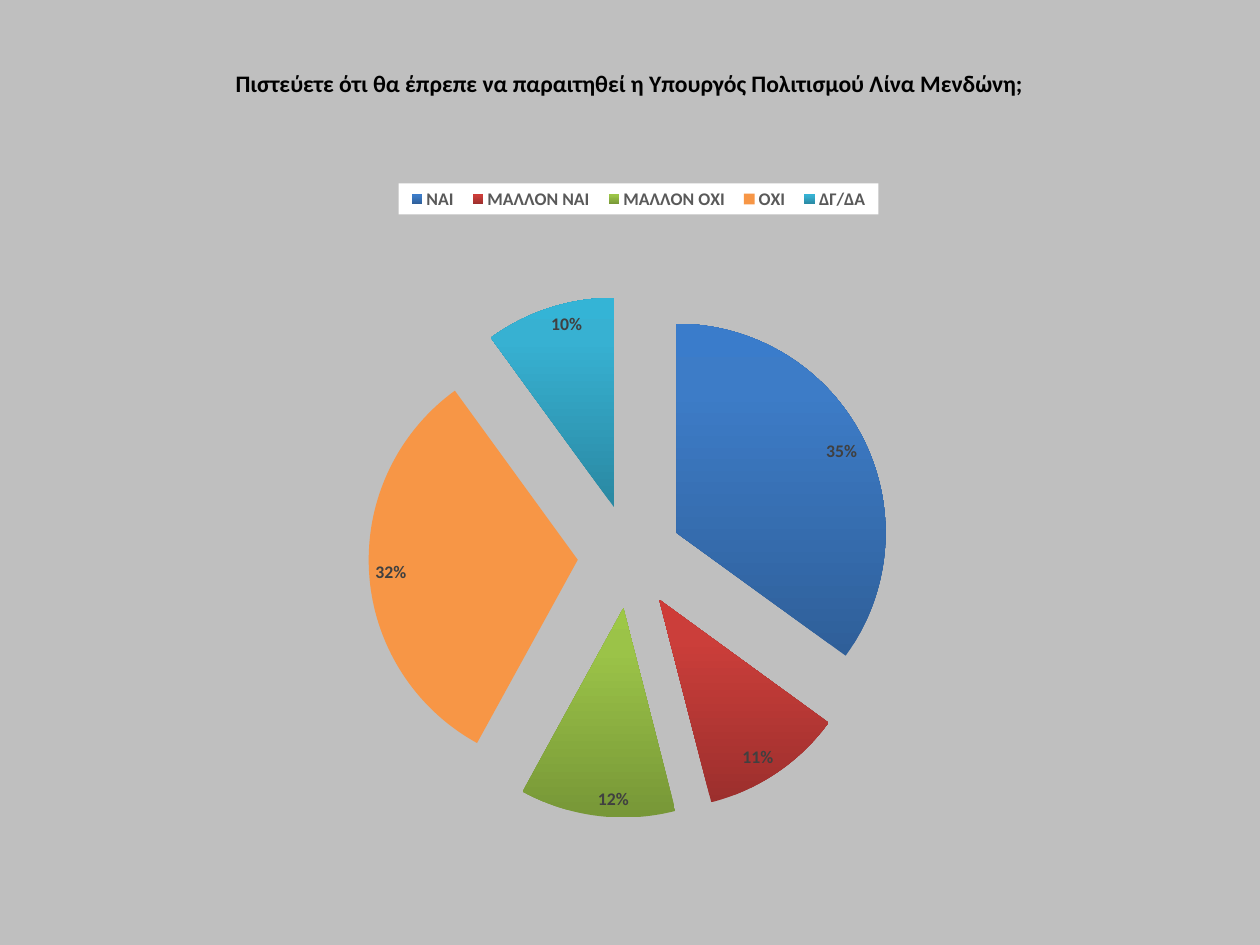
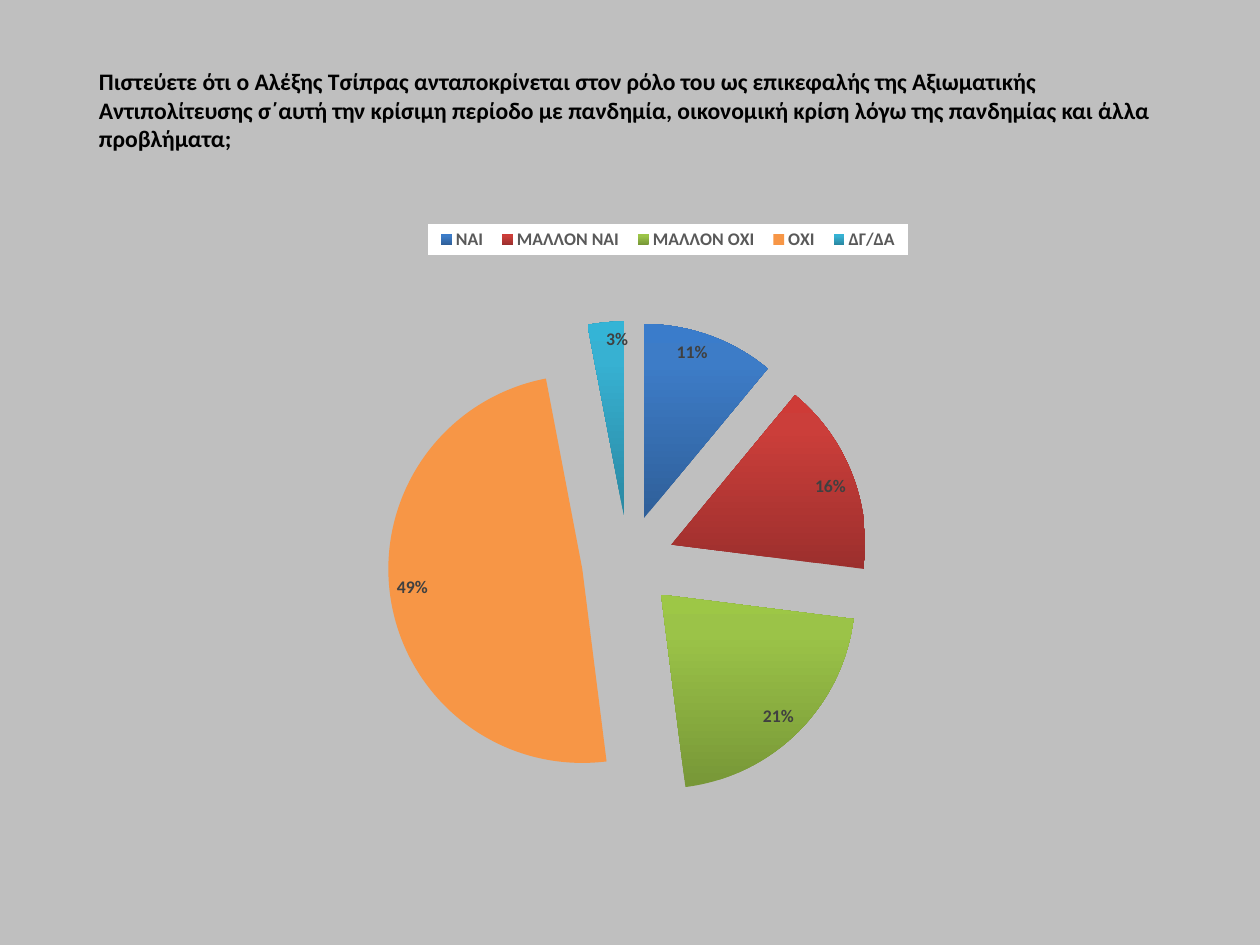
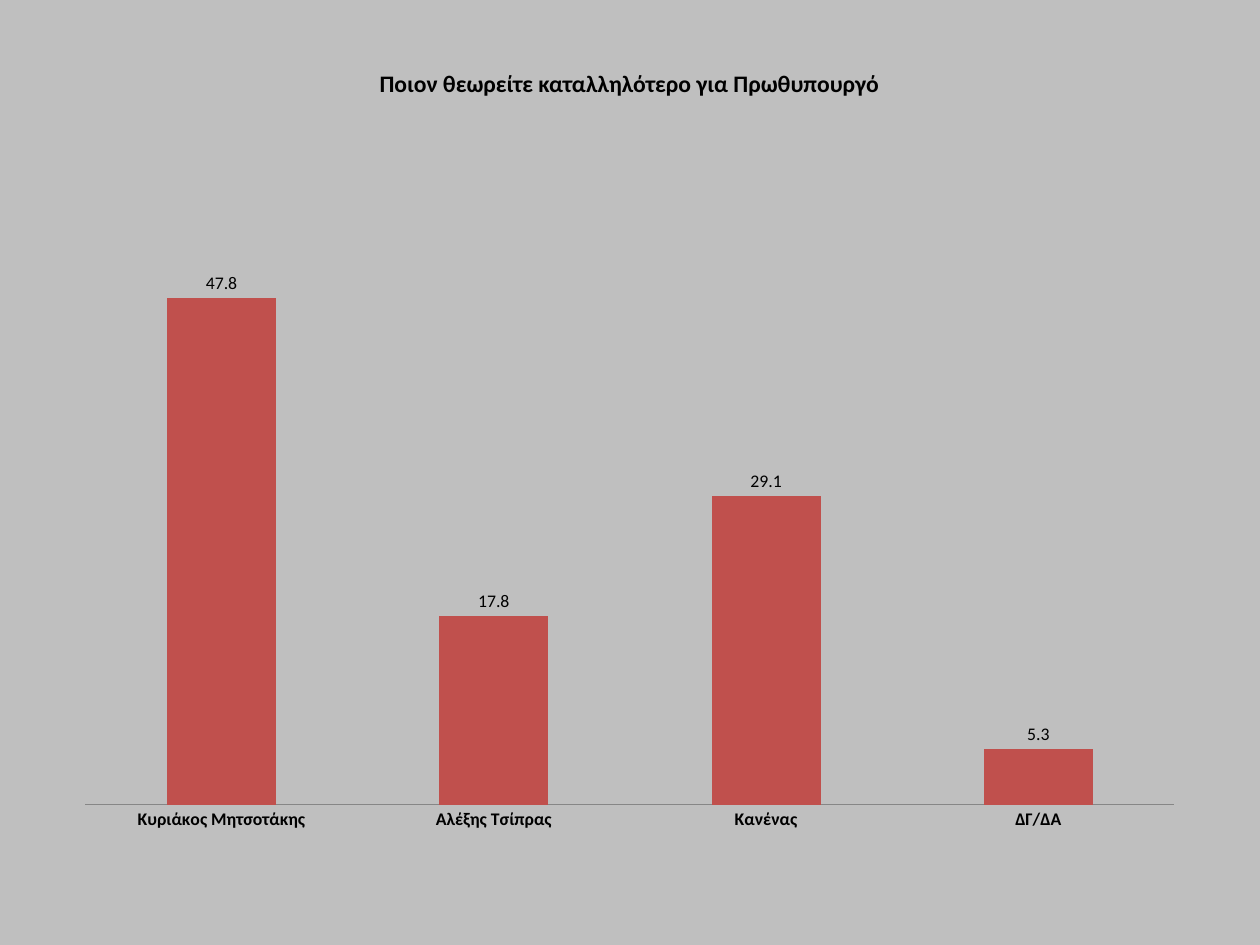
import copy
from dataclasses import dataclass
from typing import Any, Optional

import lxml.etree
import pptx
import pptx.chart.data
import pptx.dml.color
import pptx.enum.chart
import pptx.enum.text
import pptx.oxml.ns
import pptx.util

Inches = pptx.util.Inches
Pt = pptx.util.Pt
RGB = pptx.dml.color.RGBColor.from_string
qn = pptx.oxml.ns.qn
Align = pptx.enum.text.PP_ALIGN
ChartType = pptx.enum.chart.XL_CHART_TYPE
LabelPosition = pptx.enum.chart.XL_LABEL_POSITION

Box = tuple[float, float, float, float]


# Theme
@dataclass(frozen=True)
class Theme:
    font: str = "Calibri"
    background: str = "BFBFBF"
    text: str = "000000"
    legend_text: str = "595959"
    legend_fill: str = "FFFFFF"
    slice_label: str = "404040"
    bar: str = "C0504D"
    axis: str = "868686"
    title_size: int = 16
    label_size: int = 12
    base_size: int = 10
    # One tuple per answer: colours from bottom to top, or one solid colour
    answers: tuple[tuple[str, ...], ...] = (
        ("2F5F99", "3D7CC7", "3A7CCB"),
        ("9C2F2D", "CB3E3A", "CE3B37"),
        ("779737", "9BC348", "9DC746"),
        ("F79646",),
        ("2A88A2", "37B1D2", "34B4D6"),
    )
    stops: tuple[float, ...] = (0, 0.8, 1)


THEME = Theme()
CHART_LEFT, CHART_WIDTH = 0.59, 10.66
ANSWERS = ("ΝΑΙ", "ΜΑΛΛΟΝ ΝΑΙ", "ΜΑΛΛΟΝ ΟΧΙ", "ΟΧΙ", "ΔΓ/ΔΑ")
LEADERS = ("Κυριάκος Μητσοτάκης", "Αλέξης Τσίπρας", "Κανένας", "ΔΓ/ΔΑ")


# Content
@dataclass(frozen=True)
class PieLayout:
    explosion: int
    plot: Box      # fractions of the chart
    legend: Box    # fractions of the chart


@dataclass(frozen=True)
class Question:
    title: str
    title_height: float
    chart_top: float
    chart_height: float
    categories: tuple[str, ...]
    values: tuple[float, ...]
    align: Any = Align.CENTER
    pie: Optional[PieLayout] = None


QUESTIONS = (
    Question(
        "Πιστεύετε ότι θα έπρεπε να παραιτηθεί η Υπουργός Πολιτισμού Λίνα Μενδώνη;",
        0.62, 1.61, 6.33, ANSWERS, (35, 11, 12, 32, 10),
        pie=PieLayout(25, (0.077, 0.184, 0.846, 0.776), (0.296, 0.018, 0.423, 0.046)),
    ),
    Question(
        "Πιστεύετε ότι ο Αλέξης Τσίπρας ανταποκρίνεται στον ρόλο του ως επικεφαλής της "
        "Αξιωματικής Αντιπολίτευσης σ΄αυτή την κρίσιμη περίοδο με πανδημία, οικονομική "
        "κρίση λόγω της πανδημίας και άλλα προβλήματα;",
        1.12, 1.92, 6.01, ANSWERS, (11, 16, 21, 49, 3), Align.LEFT,
        PieLayout(24, (0.086, 0.183, 0.825, 0.752), (0.322, 0.031, 0.423, 0.048)),
    ),
    Question(
        "Ποιον θεωρείτε καταλληλότερο για Πρωθυπουργό",
        0.62, 1.46, 6.47, LEADERS, (47.8, 17.8, 29.1, 5.3),
    ),
)


# Shared helpers
def apply(target: Any, values: dict[str, Any]) -> None:
    for name, value in values.items():
        setattr(target, name, value)


def style_font(font: Any, size: int, color: str, bold: bool = False) -> None:
    apply(font, {"name": THEME.font, "size": Pt(size), "bold": bold})
    font.color.rgb = RGB(color)


def manual_layout(box: Box, inner: bool = False) -> Any:
    layout = lxml.etree.Element(qn("c:layout"))
    manual = lxml.etree.SubElement(layout, qn("c:manualLayout"))
    settings = {"layoutTarget": "inner"} if inner else {}
    settings |= {"xMode": "edge", "yMode": "edge"}
    settings |= dict(zip("xywh", map(str, box)))
    for tag, value in settings.items():
        lxml.etree.SubElement(manual, qn(f"c:{tag}"), val=value)
    return layout


def add_title(slide: Any, question: Question) -> None:
    title = slide.shapes.title
    apply(title, {"left": Inches(0.81), "top": Inches(0.47),
                  "width": Inches(10.21), "height": Inches(question.title_height)})
    frame = title.text_frame
    apply(frame, {"text": question.title, "word_wrap": True,
                  "auto_size": pptx.enum.text.MSO_AUTO_SIZE.NONE,
                  "vertical_anchor": pptx.enum.text.MSO_ANCHOR.MIDDLE,
                  "margin_left": Inches(0.12), "margin_right": Inches(0.12),
                  "margin_top": Inches(0.06), "margin_bottom": Inches(0.06)})
    paragraph = frame.paragraphs[0]
    paragraph.alignment = question.align
    style_font(paragraph.runs[0].font, THEME.title_size, THEME.text, True)


def add_chart(slide: Any, question: Question, kind: Any) -> Any:
    data = pptx.chart.data.CategoryChartData()
    data.categories = question.categories
    data.add_series("Series 1", question.values)
    chart = slide.shapes.add_chart(
        kind, Inches(CHART_LEFT), Inches(question.chart_top),
        Inches(CHART_WIDTH), Inches(question.chart_height), data).chart
    apply(chart, {"has_title": False, "has_legend": question.pie is not None})
    style_font(chart.font, THEME.base_size, THEME.text)
    return chart


# Pie charts
def fill_slices(series: Any) -> None:
    for index, colors in enumerate(THEME.answers):
        look = series.points[index].format
        look.line.fill.background()
        if len(colors) == 1:
            look.fill.solid()
            look.fill.fore_color.rgb = RGB(colors[0])
            continue
        look.fill.gradient()
        look.fill.gradient_angle = 90
        stop_list = series._element.findall(".//" + qn("a:gsLst"))[-1]
        stop_list.insert(1, copy.deepcopy(stop_list[0]))
        for stop, color, position in zip(look.fill.gradient_stops, colors, THEME.stops):
            stop.color.rgb = RGB(color)
            stop.position = position


def style_legend(legend: Any, box: Box) -> None:
    apply(legend, {"position": pptx.enum.chart.XL_LEGEND_POSITION.BOTTOM,
                   "include_in_layout": False})
    style_font(legend.font, THEME.label_size, THEME.legend_text, True)
    element = legend._element
    for old in element.findall(qn("c:layout")):
        element.remove(old)
    element.find(qn("c:legendPos")).addnext(manual_layout(box))
    panel = lxml.etree.Element(qn("c:spPr"))
    fill = lxml.etree.SubElement(panel, qn("a:solidFill"))
    lxml.etree.SubElement(fill, qn("a:srgbClr"), val=THEME.legend_fill)
    element.find(qn("c:overlay")).addnext(panel)


def add_pie(slide: Any, question: Question, pie: PieLayout) -> None:
    chart = add_chart(slide, question, ChartType.PIE)
    plot = chart.plots[0]
    plot.vary_by_categories = True
    series = plot.series[0]
    explosion = lxml.etree.Element(qn("c:explosion"), val=str(pie.explosion))
    series._element.find(qn("c:tx")).addnext(explosion)
    fill_slices(series)

    labels = series.data_labels
    apply(labels, {"show_percentage": True, "show_value": False,
                   "number_format": "0%", "number_format_is_linked": False,
                   "position": LabelPosition.INSIDE_END})
    style_font(labels.font, THEME.label_size, THEME.slice_label, True)

    style_legend(chart.legend, pie.legend)
    plot_area = chart._chartSpace.chart.plotArea
    for old in plot_area.findall(qn("c:layout")):
        plot_area.remove(old)
    plot_area.insert(0, manual_layout(pie.plot, inner=True))


# Column chart
def add_columns(slide: Any, question: Question) -> None:
    chart = add_chart(slide, question, ChartType.COLUMN_CLUSTERED)
    plot = chart.plots[0]
    apply(plot, {"gap_width": 150, "vary_by_categories": False})
    series = plot.series[0]
    series.format.fill.solid()
    series.format.fill.fore_color.rgb = RGB(THEME.bar)

    labels = series.data_labels
    apply(labels, {"show_value": True, "number_format": "0.0",
                   "number_format_is_linked": False,
                   "position": LabelPosition.OUTSIDE_END})
    style_font(labels.font, THEME.label_size, THEME.text)

    apply(chart.value_axis, {"visible": False, "has_major_gridlines": False,
                             "minimum_scale": 0, "maximum_scale": 60})
    names = chart.category_axis
    names.major_tick_mark = pptx.enum.chart.XL_TICK_MARK.NONE
    names.format.line.color.rgb = RGB(THEME.axis)
    style_font(names.tick_labels.font, THEME.label_size, THEME.text, True)


def main() -> None:
    deck = pptx.Presentation()
    apply(deck, {"slide_width": Inches(11.84), "slide_height": Inches(8.88)})
    backdrop = deck.slide_master.background.fill
    backdrop.solid()
    backdrop.fore_color.rgb = RGB(THEME.background)
    title_only = deck.slide_layouts.get_by_name("Title Only")

    for question in QUESTIONS:
        slide = deck.slides.add_slide(title_only)
        add_title(slide, question)
        if question.pie:
            add_pie(slide, question, question.pie)
        else:
            add_columns(slide, question)
    deck.save("out.pptx")


if __name__ == "__main__":
    main()
